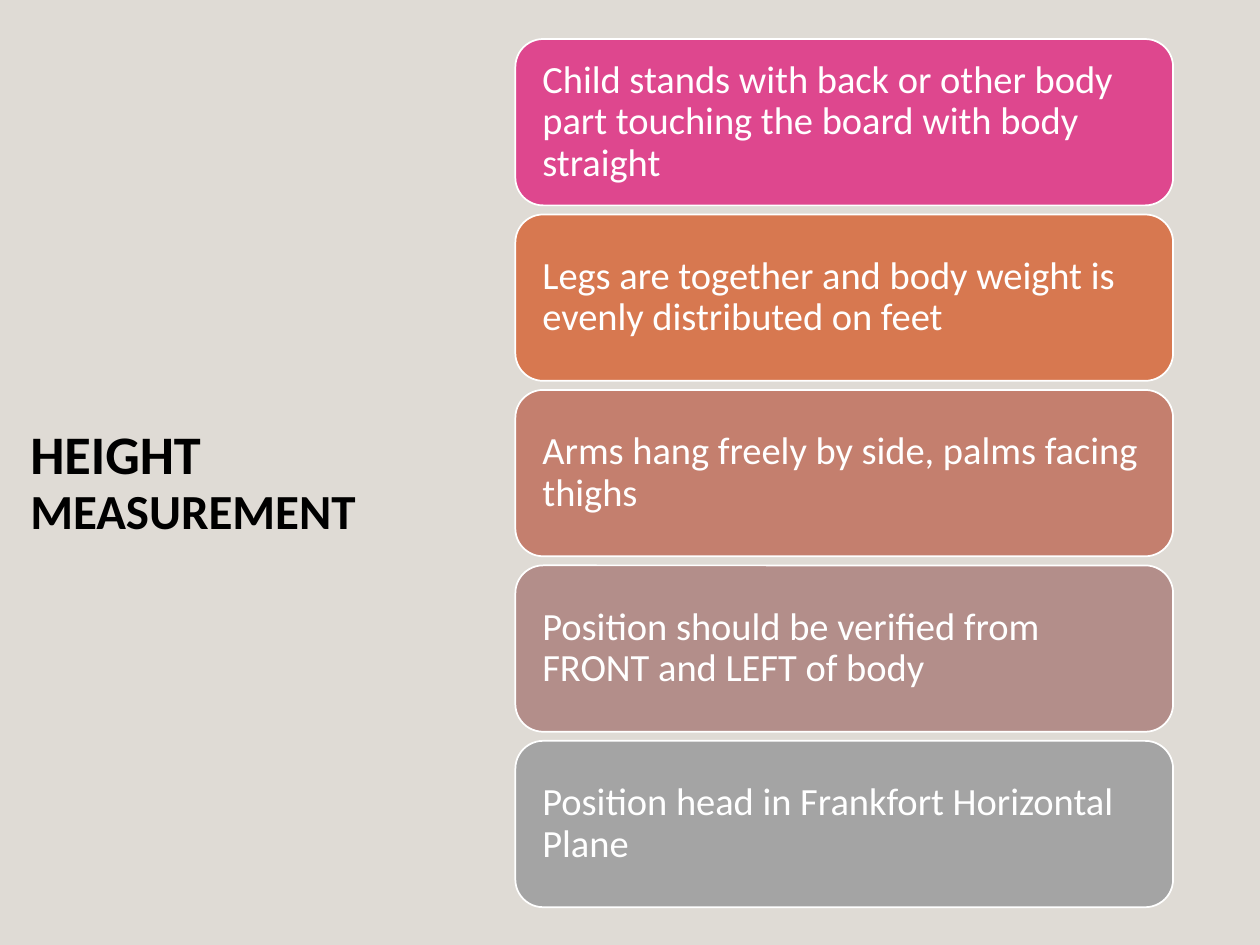
from dataclasses import dataclass

from pptx import Presentation
from pptx.dml.color import RGBColor
from pptx.enum import shapes, text
from pptx.util import Inches, Pt


@dataclass(frozen=True)
class Theme:
    font: str = "Calibri"
    back: str = "DFDBD5"
    ink: str = "000000"
    light: str = "FFFFFF"
    head: int = 31
    sub: int = 28
    body: int = 22


@dataclass(frozen=True)
class Card:
    words: str
    fill: str


THEME = Theme()
LEFT, TOP, WIDTH, HEIGHT = 4.09, 0.31, 5.22, 1.32
END = 7.2
CARDS = [
    Card("Child stands with back or other body part touching the board with body straight", "DE478E"),
    Card("Legs are together and body weight is evenly distributed on feet", "D77850"),
    Card("Arms hang freely by side, palms facing thighs", "C47F6E"),
    Card("Position should be verified from FRONT and LEFT of body", "B38E8A"),
    Card("Position head in Frankfort Horizontal Plane", "A4A4A4"),
]


def apply(item, values: dict) -> None:
    for name, value in values.items():
        setattr(item, name, value)


def paint(fill, tint: str) -> None:
    fill.solid()
    fill.fore_color.rgb = RGBColor.from_string(tint)


def write(frame, runs: list[tuple[str, int]], tint: str, bold: bool, side: float, edge: float) -> None:
    apply(frame, {
        "word_wrap": True,
        "auto_size": text.MSO_AUTO_SIZE.NONE,
        "vertical_anchor": text.MSO_ANCHOR.MIDDLE,
        "margin_left": Inches(side),
        "margin_right": Inches(side),
        "margin_top": Inches(edge),
        "margin_bottom": Inches(edge),
    })
    para = frame.paragraphs[0]
    apply(para, {"alignment": text.PP_ALIGN.LEFT, "line_spacing": 0.9})
    for words, size in runs:
        run = para.add_run()
        run.text = words
        apply(run.font, {"name": THEME.font, "size": Pt(size), "bold": bold})
        run.font.color.rgb = RGBColor.from_string(tint)


def draw(slide, card: Card, top: float) -> None:
    box = slide.shapes.add_shape(
        shapes.MSO_SHAPE.ROUNDED_RECTANGLE,
        Inches(LEFT), Inches(top), Inches(WIDTH), Inches(HEIGHT),
    )
    box.shadow.inherit = False
    box.adjustments[0] = 0.167
    paint(box.fill, card.fill)
    paint(box.line.fill, THEME.light)
    box.line.width = Pt(1)
    write(box.text_frame, [(card.words, THEME.body)], THEME.light, False, 0.15, 0.15)


def main() -> None:
    deck = Presentation()
    apply(deck, {"slide_width": Inches(10), "slide_height": Inches(7.5)})
    slide = deck.slides.add_slide(deck.slide_layouts[5])
    paint(slide.background.fill, THEME.back)

    title = slide.shapes.title
    apply(title, {
        "left": Inches(0.14),
        "top": Inches(0.92),
        "width": Inches(3.39),
        "height": Inches(5.84),
    })
    runs = [("HEIGHT ", THEME.head), ("MEASUREMENT", THEME.sub)]
    write(title.text_frame, runs, THEME.ink, True, 0.1, 0.05)

    pitch = (END - TOP - HEIGHT) / (len(CARDS) - 1)
    for row, card in enumerate(CARDS):
        draw(slide, card, TOP + row * pitch)
    deck.save("out.pptx")


if __name__ == "__main__":
    main()
